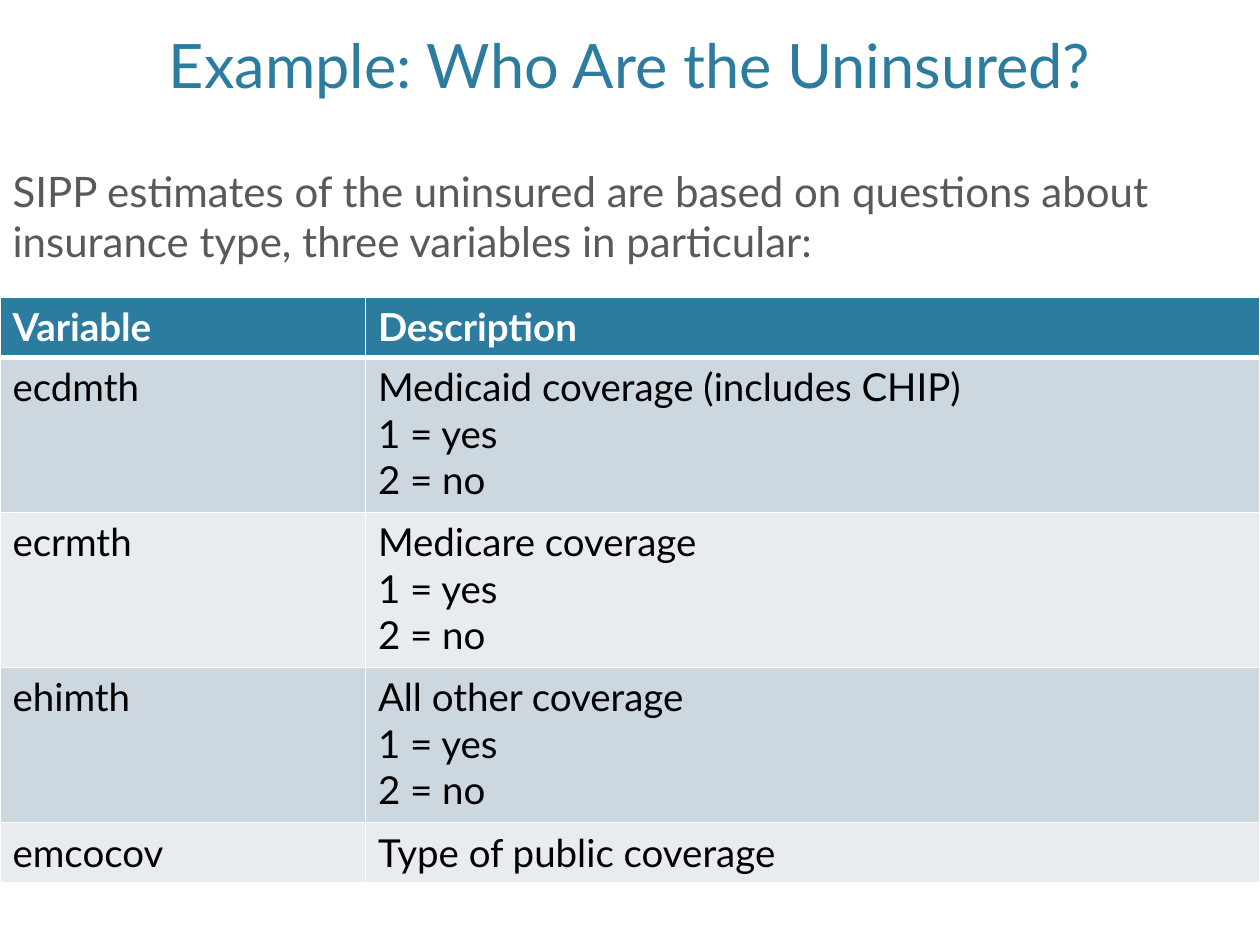
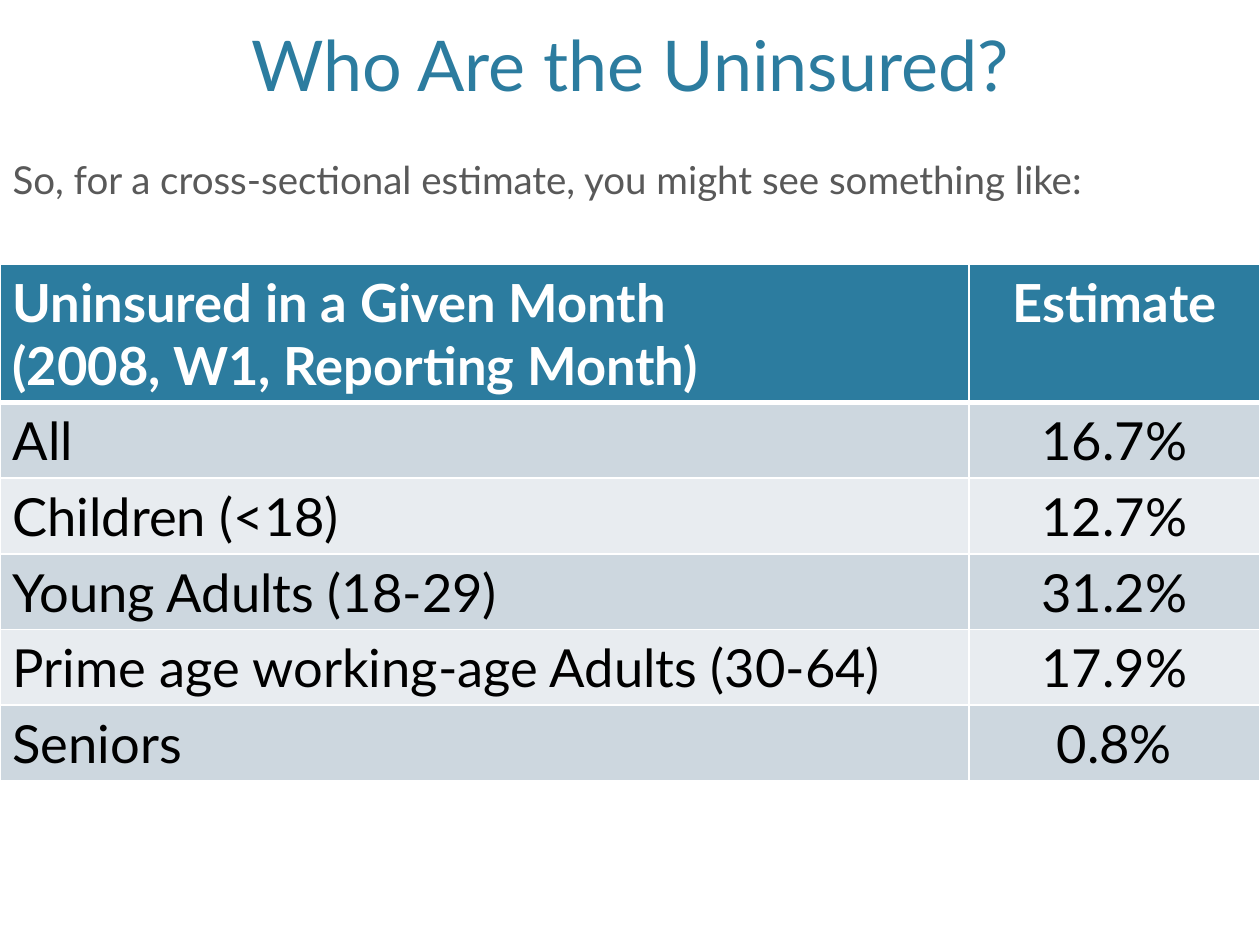
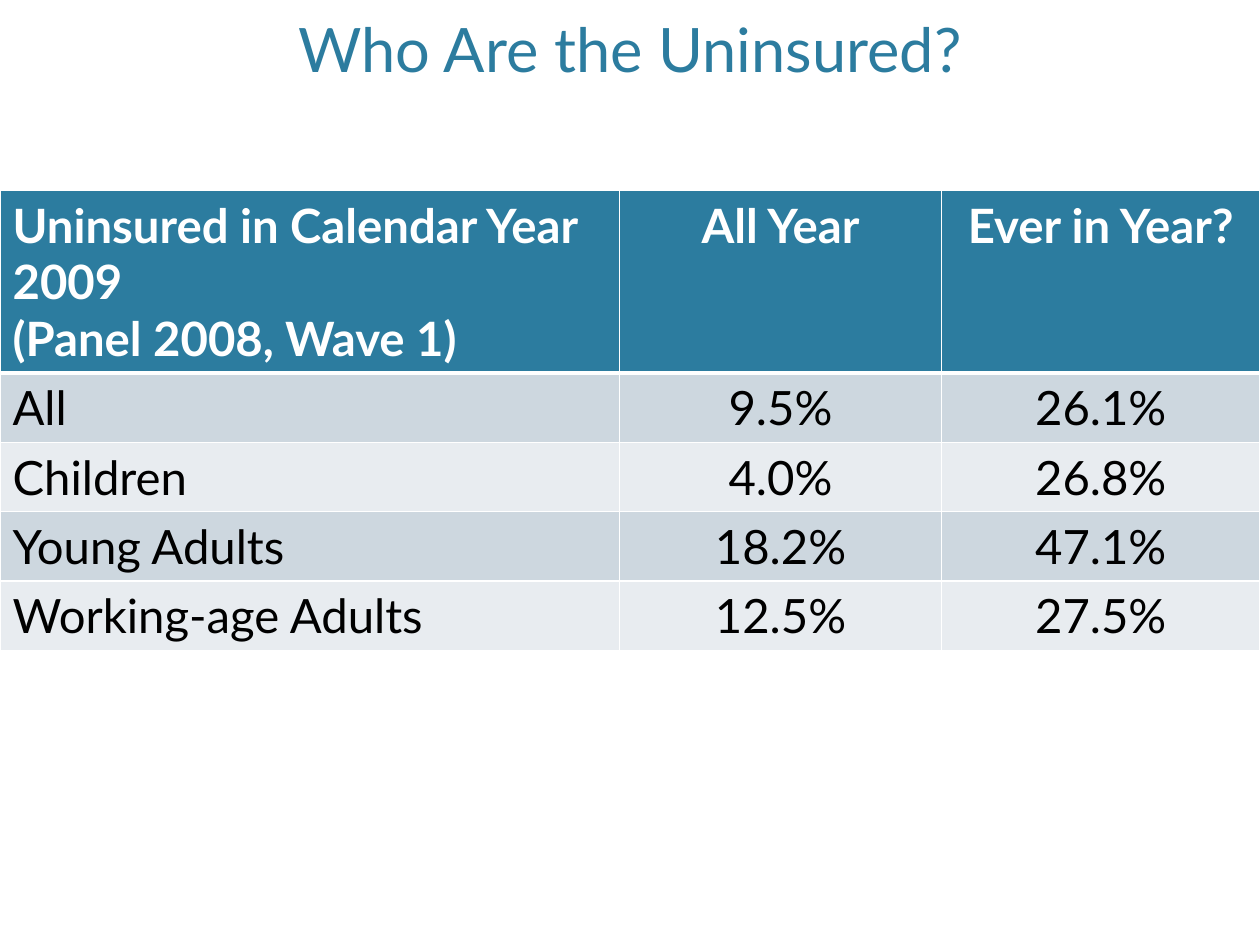
import pptx
import pptx.util
import pptx.dml.color
import pptx.enum.text
import pptx.oxml.ns
import lxml.etree

Pt = pptx.util.Pt
Align = pptx.enum.text.PP_ALIGN
Anchor = pptx.enum.text.MSO_ANCHOR

COLOURS = {
    "accent": "2C7C9F",
    "body": "595959",
    "cell": "000000",
    "paper": "FFFFFF",
    "dark band": "CDD7DF",
    "light band": "E8ECF0",
}


class SlideWriter:
    font = "Lato"
    width, height = 720, 540
    title_only, title_and_body = 5, 1

    def __init__(self):
        self.deck = pptx.Presentation()
        self.deck.slide_width = Pt(self.width)
        self.deck.slide_height = Pt(self.height)
        self.page = None

    def colour(self, name):
        return pptx.dml.color.RGBColor.from_string(COLOURS[name])

    def add_page(self, layout):
        self.page = self.deck.slides.add_slide(self.deck.slide_layouts[layout])

    def style_text(self, frame, size, colour, align, bold=False):
        for para in frame.paragraphs:
            para.alignment = align
            for span in para.runs:
                span.font.name = self.font
                span.font.size = Pt(size)
                span.font.bold = bold
                span.font.color.rgb = self.colour(colour)

    def fill_placeholder(self, box, text, place, anchor):
        box.left, box.top, box.width, box.height = map(Pt, place)
        frame = box.text_frame
        frame.text = text
        frame.word_wrap = True
        frame.auto_size = pptx.enum.text.MSO_AUTO_SIZE.NONE
        frame.vertical_anchor = anchor
        return frame

    def title(self, text, size, height):
        place = (43.2, 8.6, 633.6, height)
        frame = self.fill_placeholder(self.page.shapes.title, text, place, Anchor.BOTTOM)
        self.style_text(frame, size, "accent", Align.CENTER)

    def intro(self, text, size, place, space_before):
        frame = self.fill_placeholder(self.page.placeholders[1], text, place, Anchor.TOP)
        self.style_text(frame, size, "body", Align.LEFT)
        para = frame.paragraphs[0]
        para.space_before = Pt(space_before)
        properties = para._p.get_or_add_pPr()
        properties.set("marL", "0")
        properties.set("indent", "0")
        lxml.etree.SubElement(properties, pptx.oxml.ns.qn("a:buNone"))

    def borders(self, cell, top, bottom):
        properties = cell._tc.get_or_add_tcPr()
        widths = {"lnL": 1, "lnR": 1, "lnT": top, "lnB": bottom}
        for position, (side, width) in enumerate(widths.items()):
            line = lxml.etree.Element(pptx.oxml.ns.qn("a:" + side), w=str(Pt(width)))
            fill = lxml.etree.SubElement(line, pptx.oxml.ns.qn("a:solidFill"))
            lxml.etree.SubElement(fill, pptx.oxml.ns.qn("a:srgbClr"), val=COLOURS["paper"])
            properties.insert(position, line)

    def table(self, rows, size, top, column_widths, row_heights, value_align):
        grid = self.page.shapes.add_table(
            len(rows), len(column_widths), 0, Pt(top), Pt(self.width), Pt(sum(row_heights))
        ).table
        for column, width in zip(grid.columns, column_widths):
            column.width = Pt(width)
        for row_index, (texts, height) in enumerate(zip(rows, row_heights)):
            grid.rows[row_index].height = Pt(height)
            header = row_index == 0
            band = "accent" if header else ("light band", "dark band")[row_index % 2]
            for column_index, text in enumerate(texts):
                cell = grid.cell(row_index, column_index)
                cell.text_frame.text = text
                align = value_align if column_index else Align.LEFT
                self.style_text(cell.text_frame, size, "paper" if header else "cell", align, header)
                cell.fill.solid()
                cell.fill.fore_color.rgb = self.colour(band)
                self.borders(cell, 3 if row_index == 1 else 1, 3 if header else 1)


def variables_slide(writer):
    writer.add_page(writer.title_and_body)
    writer.title("Example: Who Are the Uninsured?", 35, 52.6)
    writer.intro(
        "SIPP estimates of the uninsured are based on questions about insurance type, "
        "three variables in particular:",
        24, (0, 90.7, 720, 420.5), 20,
    )
    answers = "\n1 = yes\n2 = no"
    rows = [
        ("Variable", "Description"),
        ("ecdmth", "Medicaid coverage (includes CHIP)" + answers),
        ("ecrmth", "Medicare coverage" + answers),
        ("ehimth", "All other coverage" + answers),
        ("emcocov", "Type of public coverage"),
    ]
    writer.table(rows, 22, 170, (208.8, 511.2), [34.4] + [88.6] * 3 + [34.4], Align.LEFT)


def monthly_slide(writer):
    writer.add_page(writer.title_and_body)
    writer.title("Who Are the Uninsured?", 40, 55.4)
    writer.intro(
        "So, for a cross-sectional estimate, you might see something like:",
        22, (0, 85.7, 707.8, 42.5), 14,
    )
    rows = [
        ("Uninsured in a Given Month\n(2008, W1, Reporting Month)", "Estimate"),
        ("All", "16.7%"),
        ("Children (<18)", "12.7%"),
        ("Young Adults (18-29)", "31.2%"),
        ("Prime age working-age Adults (30-64)", "17.9%"),
        ("Seniors", "0.8%"),
    ]
    writer.table(rows, 30, 150.8, (553.7, 166.3), [79.2] + [43.2] * 5, Align.CENTER)


def yearly_slide(writer):
    writer.add_page(writer.title_only)
    writer.title("Who Are the Uninsured?", 35, 43.2)
    rows = [
        ("Uninsured in Calendar Year 2009\n(Panel 2008, Wave 1)", "All Year", "Ever in Year?"),
        ("All", "9.5%", "26.1%"),
        ("Children", "4.0%", "26.8%"),
        ("Young Adults", "18.2%", "47.1%"),
        ("Working-age Adults", "12.5%", "27.5%"),
    ]
    writer.table(rows, 27, 108.7, (354, 184, 182), [104.4] + [39.6] * 4, Align.CENTER)


def main():
    writer = SlideWriter()
    variables_slide(writer)
    monthly_slide(writer)
    yearly_slide(writer)
    writer.deck.save("out.pptx")


if __name__ == "__main__":
    main()
